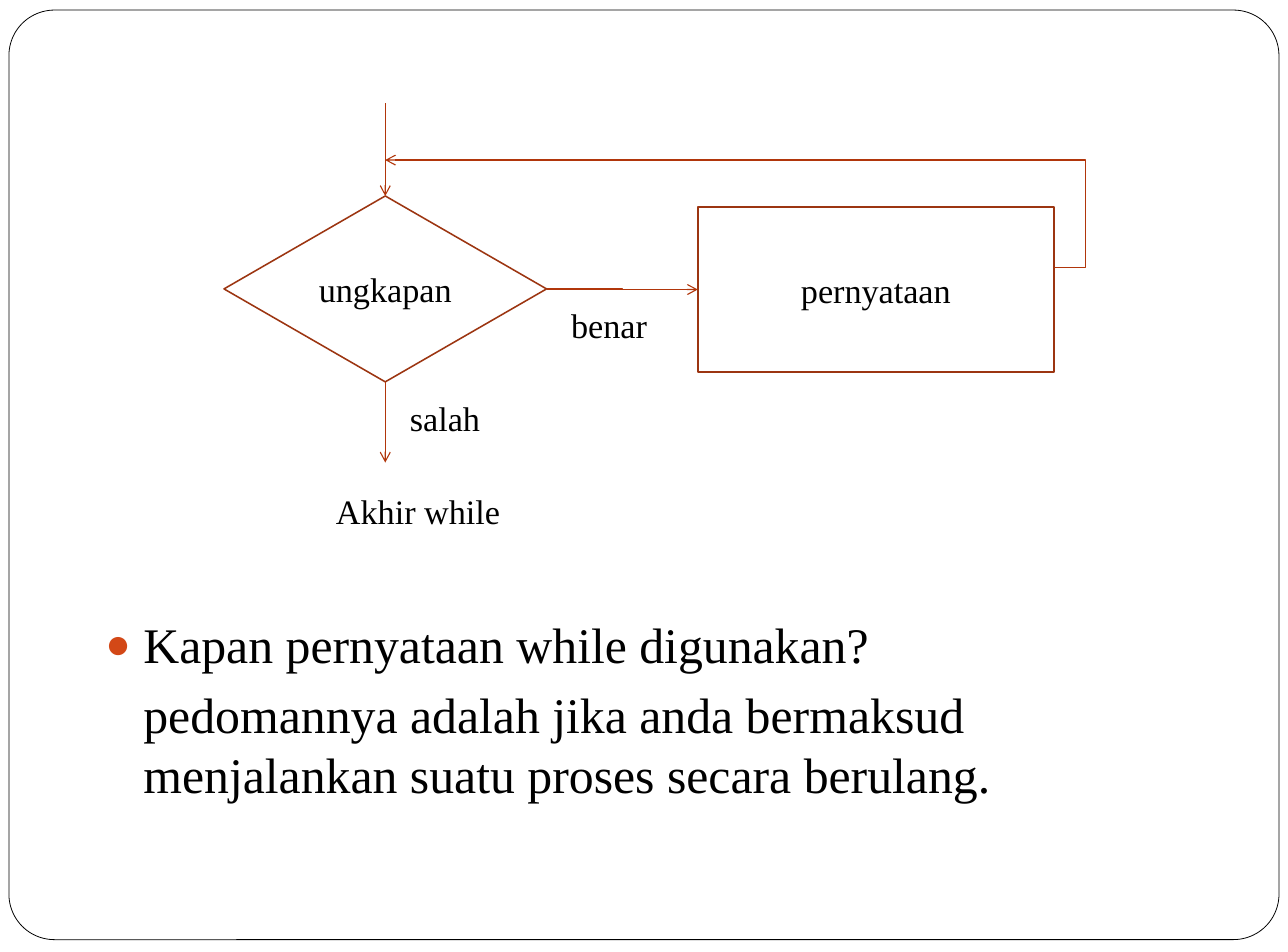
from lxml import etree
from pptx import Presentation
from pptx.dml.color import RGBColor
from pptx.enum import shapes, text
from pptx.oxml import ns
from pptx.util import Inches, Pt

BLACK, OUTLINE, ARROW = "000000", "9C3511", "B1360B"


def color(value):
    return RGBColor.from_string(value)


def write(frame, lines, size):
    frame.text = lines
    frame.word_wrap = True
    frame.auto_size = text.MSO_AUTO_SIZE.NONE
    frame.margin_left = frame.margin_right = Inches(0.11)
    frame.margin_top = frame.margin_bottom = Inches(0.06)
    for paragraph in frame.paragraphs:
        for run in paragraph.runs:
            run.font.name = "Times New Roman"
            run.font.size = Pt(size)
            run.font.color.rgb = color(BLACK)


deck = Presentation()
deck.slide_width, deck.slide_height = Inches(11.5), Inches(8.5)
slide = deck.slides.add_slide(deck.slide_layouts[1])
slide.shapes.title.element.getparent().remove(slide.shapes.title.element)

# Rounded page frame, behind everything
page = slide.shapes.add_shape(shapes.MSO_SHAPE.ROUNDED_RECTANGLE,
                              Inches(0.08), Inches(0.09), Inches(11.34), Inches(8.3))
page.adjustments[0] = 0.049
page.shadow.inherit = False
page.fill.solid()
page.fill.fore_color.rgb = color("FFFFFF")
page.line.color.rgb = color(BLACK)
page.line.width = Pt(0.5)
slide.shapes.element.insert(2, page.element)

# Question and guideline
guideline = slide.placeholders[1]
guideline.left, guideline.top = Inches(0.83), Inches(5.42)
guideline.width, guideline.height = Inches(9.78), Inches(1.98)
write(guideline.text_frame,
      "Kapan pernyataan while digunakan?\n"
      "pedomannya adalah jika anda bermaksud menjalankan suatu proses secara berulang.", 32)
guideline.text_frame.vertical_anchor = text.MSO_ANCHOR.TOP
for paragraph, bulleted in zip(guideline.text_frame.paragraphs, (True, False)):
    paragraph.space_before = Pt(6.6)
    props = paragraph._p.get_or_add_pPr()
    props.set("marL", str(Inches(0.34)))
    props.set("indent", str(Inches(-0.34) if bulleted else 0))
    if bulleted:
        bullet_color = etree.SubElement(props, ns.qn("a:buClr"))
        etree.SubElement(bullet_color, ns.qn("a:srgbClr"), val="D34817")
        etree.SubElement(props, ns.qn("a:buSzPct"), val="85000")
        etree.SubElement(props, ns.qn("a:buChar"), char="●")
    else:
        etree.SubElement(props, ns.qn("a:buNone"))

# Flowchart steps
steps = []
for preset, label, left, top, width, height in (
        (shapes.MSO_SHAPE.FLOWCHART_DECISION, "ungkapan", 2, 1.75, 2.88, 1.66),
        (shapes.MSO_SHAPE.FLOWCHART_PROCESS, "pernyataan", 6.23, 1.85, 3.18, 1.47)):
    step = slide.shapes.add_shape(preset, Inches(left), Inches(top), Inches(width), Inches(height))
    step.shadow.inherit = False
    step.fill.background()
    step.line.color.rgb = color(OUTLINE)
    step.line.width = Pt(1)
    write(step.text_frame, label, 22)
    step.text_frame.vertical_anchor = text.MSO_ANCHOR.MIDDLE
    step.text_frame.paragraphs[0].alignment = text.PP_ALIGN.CENTER
    steps.append(step)
condition, statement = steps

# Branch labels
for label, left, top, width in (("benar", 4.99, 2.66, 1.33),
                                ("salah", 3.55, 3.49, 1.33),
                                ("Akhir while", 2.89, 4.32, 2.1)):
    branch = slide.shapes.add_textbox(Inches(left), Inches(top), Inches(width), Inches(0.49))
    write(branch.text_frame, label, 22)

# Arrows: entry, false branch, true branch, loop back
STRAIGHT, ELBOW = shapes.MSO_CONNECTOR.STRAIGHT, shapes.MSO_CONNECTOR.ELBOW
entry, if_false, if_true, loop_back = arrows = [
    slide.shapes.add_connector(kind, *map(Inches, ends)) for kind, ends in (
        (STRAIGHT, (3.44, 0.92, 3.44, 1.75)),
        (STRAIGHT, (3.44, 3.41, 3.44, 4.13)),
        (ELBOW, (4.88, 2.58, 6.23, 2.59)),
        (ELBOW, (9.41, 2.39, 3.44, 1.43)))]
entry.end_connect(condition, 0)
if_false.begin_connect(condition, 2)
if_true.begin_connect(condition, 3)
if_true.end_connect(statement, 1)
for arrow in arrows:
    arrow.line.color.rgb = color(ARROW)
    arrow.line.width = Pt(0.75)
    etree.SubElement(arrow.line._get_or_add_ln(), ns.qn("a:tailEnd"), type="arrow")
    etree.SubElement(arrow.element.spPr, ns.qn("a:effectLst"))

# Send the loop around the right side of the statement
bend = loop_back.element.spPr.find(ns.qn("a:prstGeom")).get_or_add_avLst()
etree.SubElement(bend, ns.qn("a:gd"), name="adj1", fmla="val -4800")

deck.save("out.pptx")
